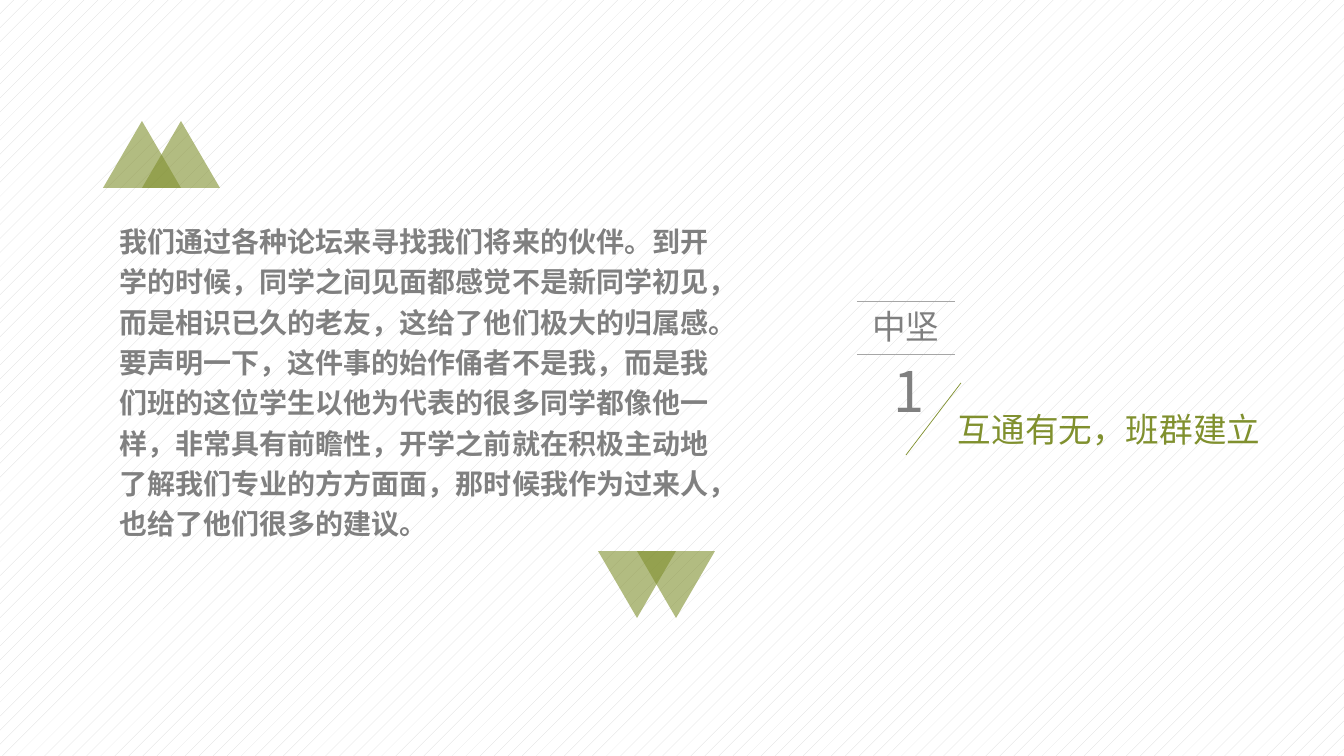
"""Builds a quote slide with a section heading and triangle quotation marks."""
from pptx import Presentation
from pptx.dml.color import RGBColor
from pptx.enum.dml import MSO_PATTERN
from pptx.enum.shapes import MSO_CONNECTOR, MSO_SHAPE
from pptx.enum.text import MSO_ANCHOR, PP_ALIGN
from pptx.oxml.ns import qn
from pptx.util import Pt
from lxml import etree

PX = 914400 / 100.8
SANS, SERIF = "Noto Sans CJK SC", "Times New Roman"
LEFT, CENTER, JUSTIFY = PP_ALIGN.LEFT, PP_ALIGN.CENTER, PP_ALIGN.JUSTIFY
TOP, MIDDLE = MSO_ANCHOR.TOP, MSO_ANCHOR.MIDDLE
TRIANGLE, ROUNDED = MSO_SHAPE.ISOSCELES_TRIANGLE, MSO_SHAPE.ROUNDED_RECTANGLE
STRAIGHT = MSO_CONNECTOR.STRAIGHT
DOTS = MSO_PATTERN.PERCENT_5
COLORS = {"green": "80902E", "text": "808080", "label": "7F7F7F",
          "rule": "A6A6A6", "dots": "D9D9D9", "paper": "FFFFFF"}
QUOTE = (
    "我们通过各种论坛来寻找我们将来的伙伴。到开学的时候，同学之间见面都感觉不是新同学初见，"
    "而是相识已久的老友，这给了他们极大的归属感。要声明一下，这件事的始作俑者不是我，"
    "而是我们班的这位学生以他为代表的很多同学都像他一样，非常具有前瞻性，"
    "开学之前就在积极主动地了解我们专业的方方面面，那时候我作为过来人，也给了他们很多的建议。"
)


def px(*lengths):
    return [round(n * PX) for n in lengths]


def rgb(name):
    return RGBColor.from_string(COLORS[name])


def write(sp, text, size, color, font=SANS, bold=False, align=LEFT,
          anchor=TOP, spacing=None, wrap=True):
    tf = sp.text_frame
    tf.word_wrap = wrap
    tf.vertical_anchor = anchor
    p = tf.paragraphs[0]
    p.alignment = align
    p.line_spacing = spacing
    r = p.add_run()
    r.text = text
    r.font.size = Pt(size)
    r.font.bold = bold
    r.font.name = font
    r.font.color.rgb = rgb(color)
    etree.SubElement(r.font._element, qn("a:ea"), typeface=SANS)


class Deck:
    """Holds the presentation style and the current slide."""

    def __init__(self, width, height):
        self.prs = Presentation()
        self.prs.slide_width, self.prs.slide_height = px(width, height)
        self.s = self.prs.slides.add_slide(self.prs.slide_layouts[6])

    def background(self, fore, back):
        fill = self.s.background.fill
        fill.patterned()
        fill.pattern = DOTS
        fill.fore_color.rgb = rgb(fore)
        fill.back_color.rgb = rgb(back)

    def text(self, box, text, size, color, **fmt):
        write(self.s.shapes.add_textbox(*px(*box)), text, size, color, **fmt)

    def line(self, start, end, color):
        cn = self.s.shapes.add_connector(STRAIGHT, *px(*start, *end))
        cn.line.color.rgb = rgb(color)
        cn.line.width = Pt(0.5)
        etree.SubElement(cn._element.spPr, qn("a:effectLst"))

    def shape(self, kind, box):
        sp = self.s.shapes.add_shape(kind, *px(*box))
        sp.shadow.inherit = False
        sp.line.fill.background()
        sp.fill.background()
        return sp

    def panel(self, box, text, size, color, **fmt):
        sp = self.shape(ROUNDED, box)
        sp.adjustments[0] = 0.064
        write(sp, text, size, color, **fmt)

    def quote_mark(self, left, top, rotation=0):
        for i in range(2):
            sp = self.shape(TRIANGLE, (left + 39 * i, top, 78, 67))
            sp.rotation = rotation
            sp.fill.solid()
            sp.fill.fore_color.rgb = rgb("green")
            color = sp.fill._xPr.find(qn("a:solidFill"))[0]
            etree.SubElement(color, qn("a:alpha"), val="60000")


def main():
    deck = Deck(1344, 756)
    deck.background("dots", "paper")
    deck.text((948, 404, 353, 50), "互通有无，班群建立", 24, "green")
    deck.line((961, 383), (906, 455), "green")
    deck.text((884, 352, 42, 78), "1", 40, "text", wrap=False)
    for y in (301, 354):
        deck.line((857, y), (955, y), "rule")
    deck.text((857, 301, 98, 50), "中坚", 24, "label", align=CENTER)
    deck.panel((103, 206, 622, 346), QUOTE, 20, "text", font=SERIF, bold=True,
               align=JUSTIFY, anchor=MIDDLE, spacing=1.2)
    deck.quote_mark(103, 121)
    deck.quote_mark(598, 551, rotation=180)
    deck.prs.save("out.pptx")


if __name__ == "__main__":
    main()
